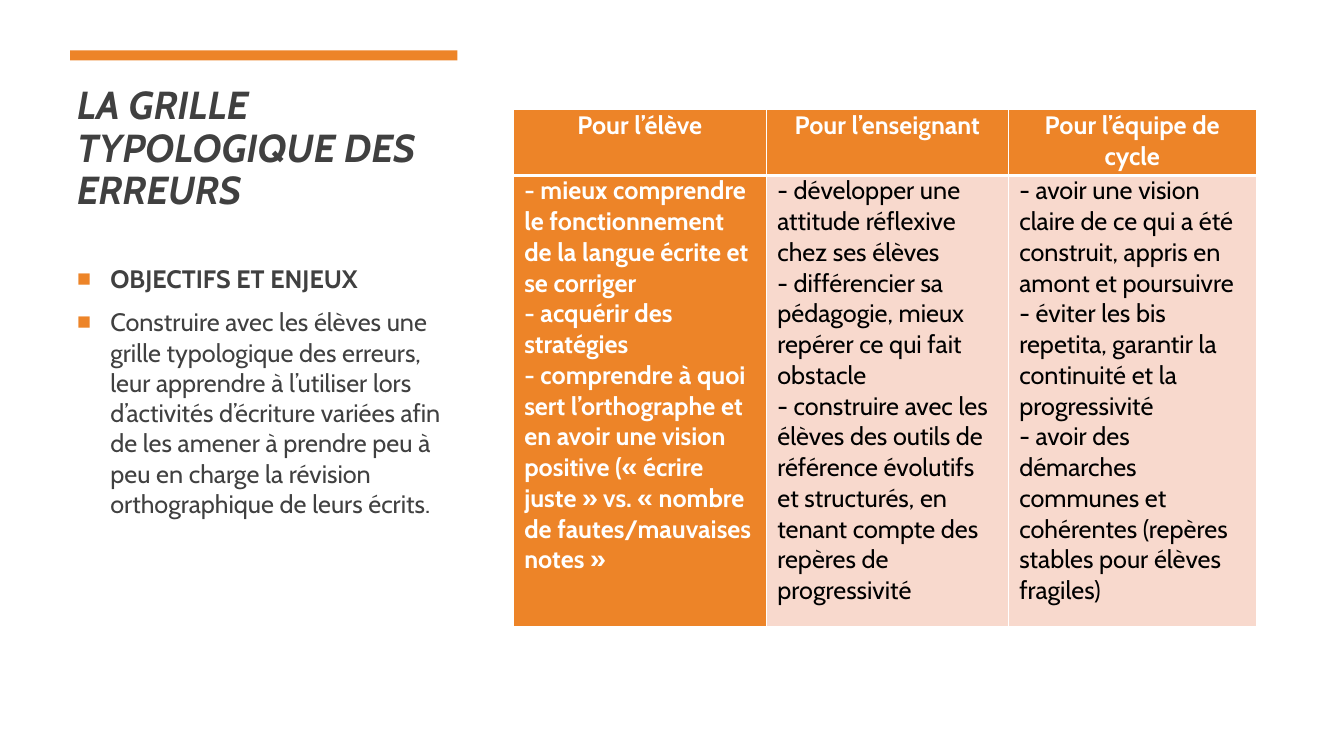
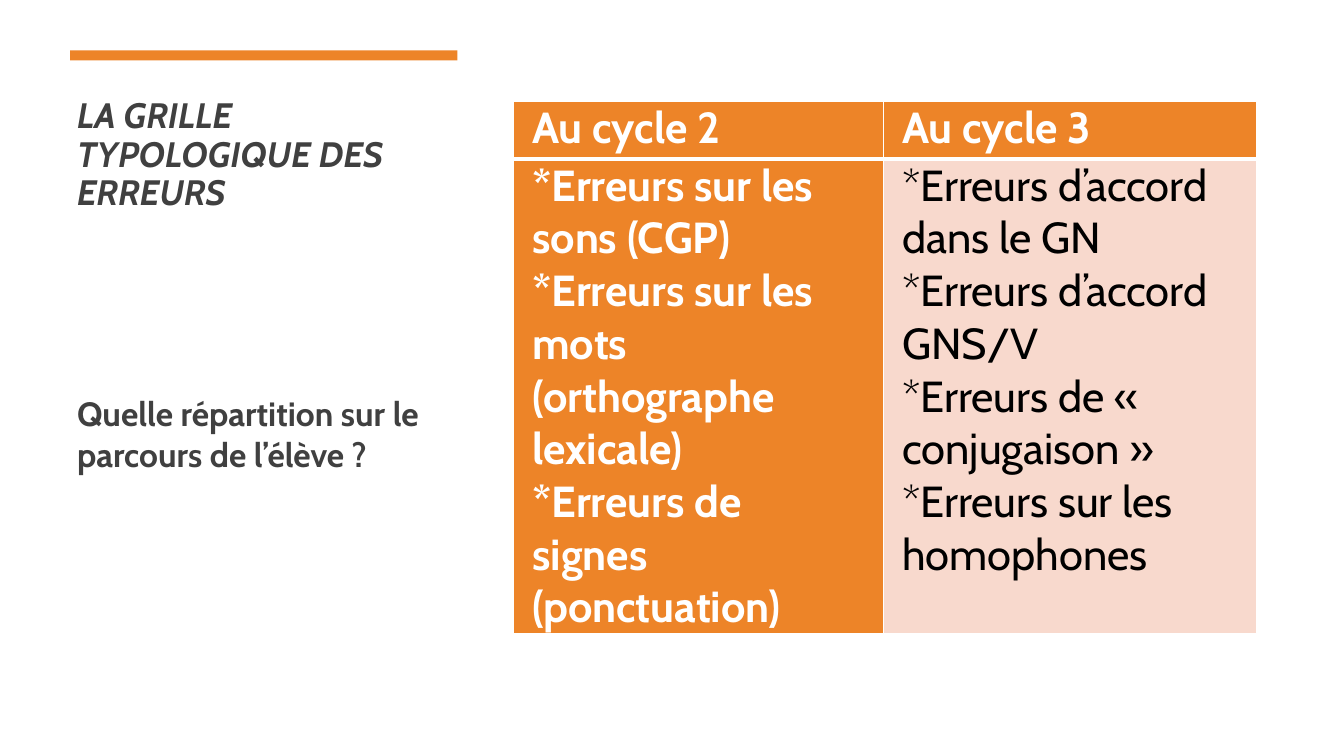
from lxml import etree
from pptx import Presentation
from pptx import util as u
from pptx.dml.color import RGBColor
from pptx.enum import shapes, text
from pptx.oxml import ns

WIDE, HIGH = 13.33, 7.5
LEFT, SPAN = WIDE * 0.05, 3.9
GRID, BREADTH = 5.09, 7.37
FONT = "Cabin"
ORANGE, PINK, GREY, WHITE, BLACK = "ED8428", "F8D9CD", "404040", "FFFFFF", "000000"
TITLE = "LA GRILLE TYPOLOGIQUE DES ERREURS"


def tint(code):
    """Turn a hex string into a colour."""
    return RGBColor.from_string(code)


def node(parent, tag, **attrs):
    """Append an XML child to a parent and return it."""
    item = etree.SubElement(parent, ns.qn(tag))
    for key, value in attrs.items():
        item.set(key, str(value))
    return item


def style(par, size, color, bold=False, italic=False):
    """Format every run of a paragraph."""
    for run in par.runs:
        font = run.font
        font.name, font.size = FONT, u.Pt(size)
        font.bold, font.italic = bold, italic
        font.color.rgb = tint(color)


def frame(slide, top, height, anchor, inset=0.05):
    """Add a wrapping text box in the left column and return its frame."""
    box = slide.shapes.add_textbox(*map(u.Inches, (LEFT, top, SPAN, height)))
    body = box.text_frame
    body.word_wrap = True
    body.vertical_anchor = anchor
    body.margin_top = u.Inches(inset)
    return body


def bullet(par):
    """Give a paragraph a hanging orange square."""
    props = par._p.get_or_add_pPr()
    dent = u.Inches(0.33)
    props.set("marL", str(dent))
    props.set("indent", str(-dent))
    node(node(props, "a:buClr"), "a:srgbClr", val=ORANGE)
    node(props, "a:buSzPct", val=92000)
    node(props, "a:buFont", typeface="Arial")
    node(props, "a:buChar", char="■")


def notes(slide, lines, size, marks=False, inset=0.05):
    """Write the left column: a bold first line, then plain ones."""
    body = frame(slide, 2.56, 3.97, text.MSO_ANCHOR.TOP, inset)
    body.text = "\n".join(lines)
    for rank, par in enumerate(body.paragraphs):
        par.space_before, par.space_after = u.Pt(size * 0.2), u.Pt(6)
        style(par, size, GREY, bold=rank == 0)
        if marks:
            bullet(par)


def edge(cell, head):
    """Draw white borders, thick between the header and the body."""
    props = cell._tc.get_or_add_tcPr()
    thick = "B" if head else "T"
    for rank, side in enumerate("LRTB"):
        width = u.Pt(3 if side == thick else 1)
        line = node(props, f"a:ln{side}", w=width)
        node(node(line, "a:solidFill"), "a:srgbClr", val=WHITE)
        props.insert(rank, line)


def fill(cell, words, size, inset, head, first, align):
    """Write and format one table cell."""
    strong = head or first
    cell.text = words
    cell.margin_left = cell.margin_right = u.Inches(inset)
    cell.margin_top = cell.margin_bottom = 0
    cell.fill.solid()
    cell.fill.fore_color.rgb = tint(ORANGE if strong else PINK)
    for par in cell.text_frame.paragraphs:
        par.alignment = align
        style(par, size, WHITE if strong else BLACK, bold=strong)
    edge(cell, head)


def table(slide, top, cols, rows, data, size, inset, align):
    """Add a table with an orange header row and first column."""
    spot = map(u.Inches, (GRID, top, BREADTH, sum(rows)))
    grid = slide.shapes.add_table(len(rows), len(cols), *spot).table
    grid.horz_banding = False
    for col, part in zip(grid.columns, cols):
        col.width = u.Inches(BREADTH * part / sum(cols))
    for row, tall in zip(grid.rows, rows):
        row.height = u.Inches(tall)
    for x, (label, points) in enumerate(data):
        fill(grid.cell(0, x), label, size, inset, True, x == 0, align)
        fill(grid.cell(1, x), "\n".join(points), size, inset, False, x == 0,
             text.PP_ALIGN.LEFT)


def page(deck, size):
    """Add a slide with the orange bar and the shared title."""
    slide = deck.slides.add_slide(deck.slide_layouts[6])
    body = frame(slide, 0.77, 1.39, text.MSO_ANCHOR.BOTTOM)
    body.text = TITLE
    par = body.paragraphs[0]
    par.line_spacing = 0.9
    style(par, size, GREY, bold=True, italic=True)
    spot = map(u.Inches, (LEFT + 0.03, 0.5, SPAN - 0.06, 0.1))
    bar = slide.shapes.add_shape(shapes.MSO_SHAPE.RECTANGLE, *spot)
    bar.shadow.inherit = False
    bar.fill.solid()
    bar.fill.fore_color.rgb = tint(ORANGE)
    bar.line.fill.background()
    return slide


def goals(deck):
    """Build the slide on aims for pupil, teacher and team."""
    slide = page(deck, 27.9)
    notes(slide, [
        "OBJECTIFS ET ENJEUX",
        "Construire avec les élèves une grille typologique des erreurs, leur "
        "apprendre à l’utiliser lors d’activités d’écriture variées afin de les "
        "amener à prendre peu à peu en charge la révision orthographique de "
        "leurs écrits.",
    ], 18, marks=True)
    data = [
        ("Pour l’élève", [
            "- mieux comprendre le fonctionnement de la langue écrite et se corriger",
            "- acquérir des stratégies",
            "- comprendre à quoi sert l’orthographe et en avoir une vision positive "
            "(« écrire juste » vs. « nombre de fautes/mauvaises notes »",
        ]),
        ("Pour l’enseignant", [
            "- développer une attitude réflexive chez ses élèves",
            "- différencier sa pédagogie, mieux repérer ce qui fait obstacle",
            "- construire avec les élèves des outils de référence évolutifs et "
            "structurés, en tenant compte des repères de progressivité",
        ]),
        ("Pour l’équipe de cycle", [
            "- avoir une vision claire de ce qui a été construit, appris en amont "
            "et poursuivre",
            "- éviter les bis repetita, garantir la continuité et la progressivité",
            "- avoir des démarches communes et cohérentes (repères stables pour "
            "élèves fragiles)",
        ]),
    ]
    table(slide, 1.09, (2.51, 2.4, 2.46), (0.65, 4.48), data, 18, 0.11,
          text.PP_ALIGN.CENTER)


def cycles(deck):
    """Build the slide on errors by school cycle."""
    slide = page(deck, 25.2)
    notes(slide, ["Quelle répartition sur le parcours de l’élève ?"], 24, inset=1.34)
    data = [
        ("Au cycle 2", [
            "*Erreurs sur les sons (CGP)",
            "*Erreurs sur les mots (orthographe lexicale)",
            "*Erreurs de signes (ponctuation)",
        ]),
        ("Au cycle 3", [
            "*Erreurs d’accord dans le GN",
            "*Erreurs d’accord GNS/V",
            "*Erreurs de « conjugaison »",
            "*Erreurs sur les homophones",
        ]),
    ]
    table(slide, 1.01, (3.67, 3.7), (0.57, 4.71), data, 31, 0.19,
          text.PP_ALIGN.LEFT)


def main():
    """Build and save the deck."""
    deck = Presentation()
    deck.slide_width, deck.slide_height = u.Inches(WIDE), u.Inches(HIGH)
    goals(deck)
    cycles(deck)
    deck.save("out.pptx")


if __name__ == "__main__":
    main()
